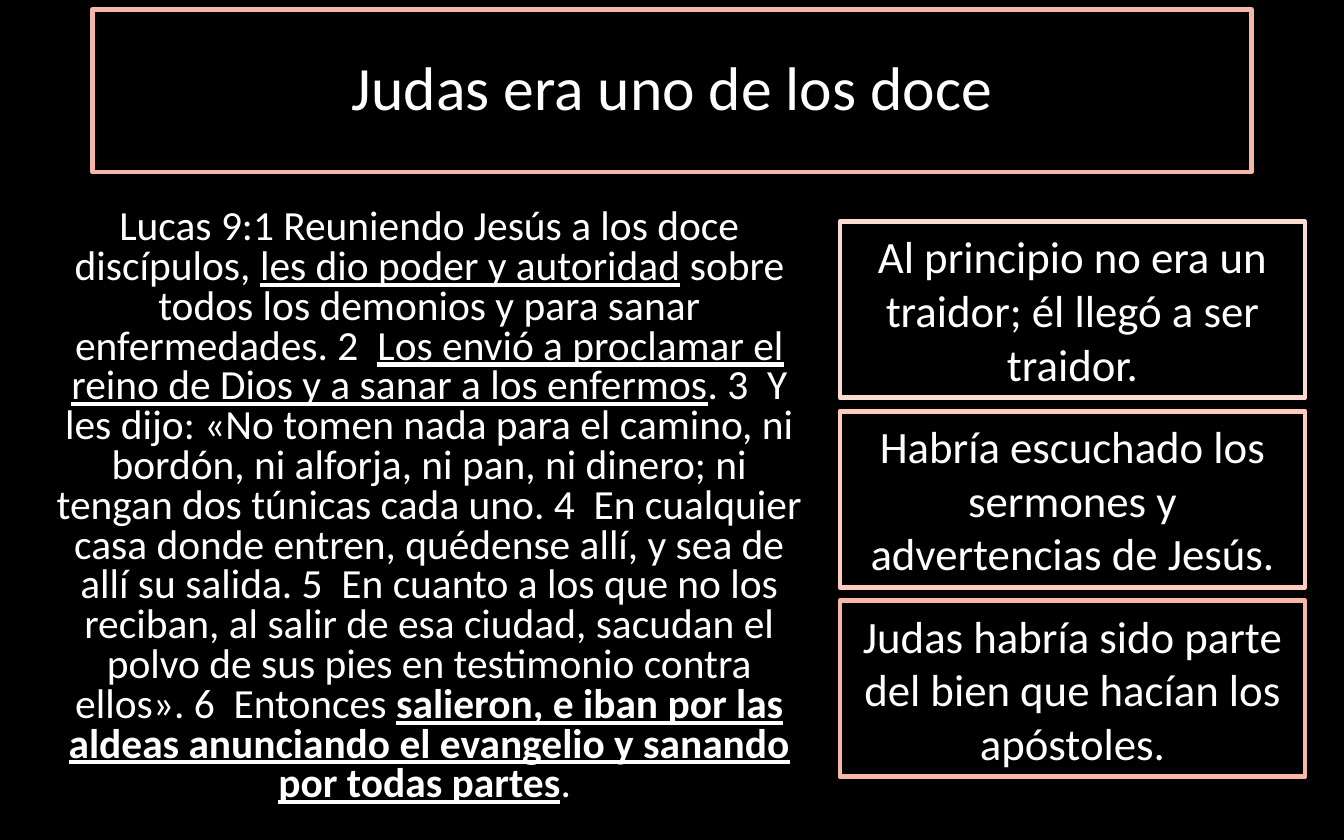
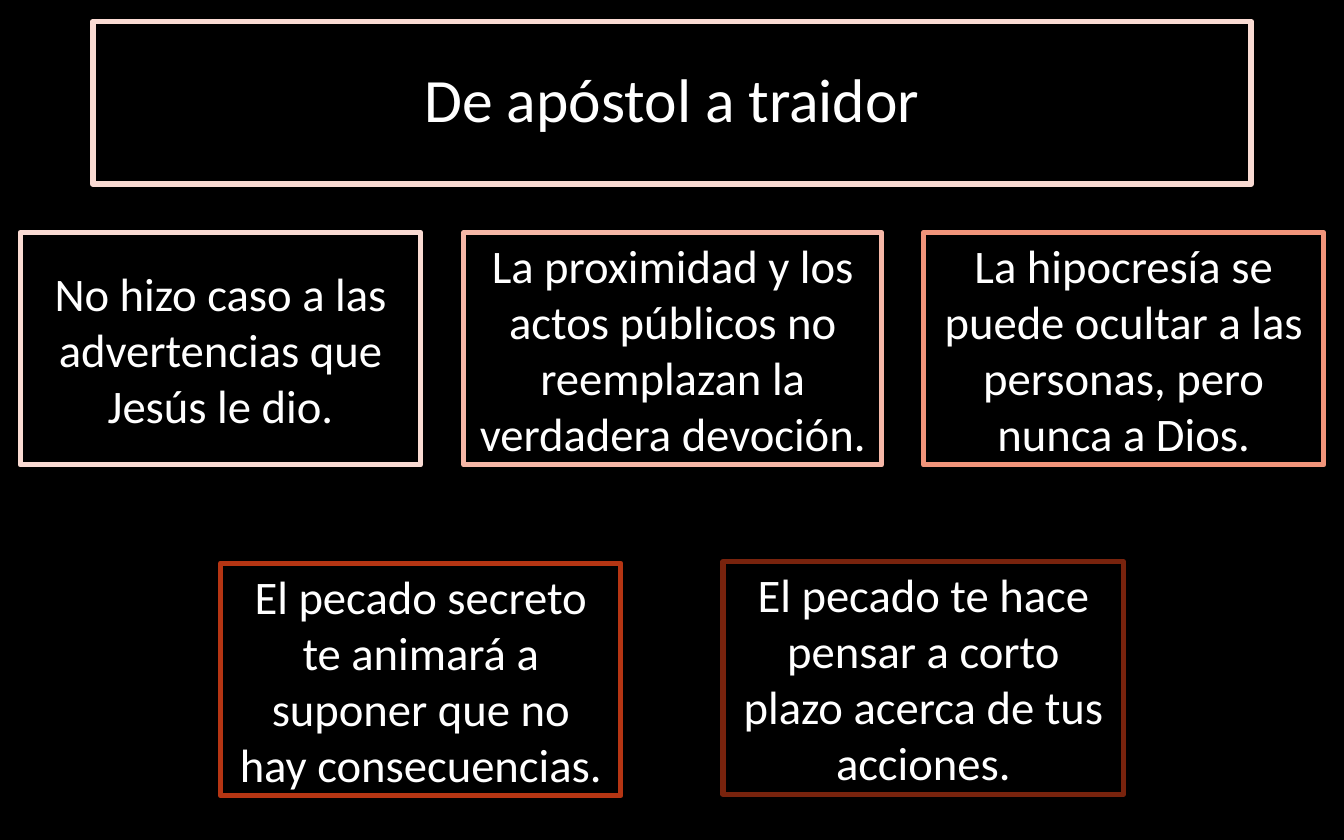
from pptx import Presentation
from pptx import util as u
from pptx.dml.color import RGBColor
from pptx.enum import shapes, text

HUES = {
    "back": "000000",
    "ink": "FFFFFF",
    "pale": "FADBD3",
    "blush": "FFCBBD",
    "rose": "F6B7A7",
    "coral": "F1947A",
    "rust": "B53513",
    "wine": "78230D",
}
FONT = "Calibri"
WIDE, HIGH = u.Inches(10), u.Inches(6.25)
COLS, ROWS = 100, 62.5


class Deck:
    def __init__(self):
        self.show = Presentation()
        self.show.slide_width, self.show.slide_height = WIDE, HIGH
        self.slide = None

    def hue(self, name):
        return RGBColor.from_string(HUES[name])

    def cells(self, x, y, w, h):
        col, row = WIDE / COLS, HIGH / ROWS
        return [u.Emu(round(n * size)) for n, size in zip((x, y, w, h), (col, row) * 2)]

    def page(self):
        self.slide = self.show.slides.add_slide(self.show.slide_layouts[6])
        fill = self.slide.background.fill
        fill.solid()
        fill.fore_color.rgb = self.hue("back")

    def label(self, shape, runs, size, lead=1.0):
        frame = shape.text_frame
        frame.word_wrap = True
        frame.vertical_anchor = text.MSO_ANCHOR.MIDDLE
        para = frame.paragraphs[0]
        para.alignment = text.PP_ALIGN.CENTER
        para.line_spacing = lead
        for words, style in runs:
            run = para.add_run()
            run.text = words
            font = run.font
            font.name, font.size = FONT, u.Pt(size)
            font.color.rgb = self.hue("ink")
            font.bold = "b" in style
            font.underline = "u" in style

    def box(self, words, place, edge, size, width, lead=1.0):
        shape = self.slide.shapes.add_shape(shapes.MSO_SHAPE.RECTANGLE, *self.cells(*place))
        shape.shadow.inherit = False
        shape.fill.background()
        shape.line.color.rgb = self.hue(edge)
        shape.line.width = u.Pt(width)
        self.label(shape, [(words, "")], size, lead)

    def title(self, words, top, edge, width):
        self.box(words, (6.9, top, 86.2, 12.1), edge, 33, width, 0.9)

    def verse(self, runs, place):
        shape = self.slide.shapes.add_textbox(*self.cells(*place))
        self.label(shape, runs, 22.2, 0.8)


def twelve(deck):
    deck.page()
    deck.title("Judas era uno de los doce", 0.7, "rose", 2.5)
    deck.verse([
        ("Lucas 9:1 Reuniendo Jesús a los doce discípulos, ", ""),
        ("les dio poder y autoridad", "u"),
        (" sobre todos los demonios y para sanar enfermedades. 2  ", ""),
        ("Los envió a proclamar el reino de Dios y a sanar a los enfermos", "u"),
        (". 3  Y les dijo: «No tomen nada para el camino, ni bordón, ni alforja, "
         "ni pan, ni dinero; ni tengan dos túnicas cada uno. 4  En cualquier casa "
         "donde entren, quédense allí, y sea de allí su salida. 5  En cuanto a los "
         "que no los reciban, al salir de esa ciudad, sacudan el polvo de sus pies "
         "en testimonio contra ellos». 6  Entonces ", ""),
        ("salieron, e iban por las aldeas anunciando el evangelio y sanando "
         "por todas partes", "bu"),
        (". ", ""),
    ], (2.9, 13.7, 58.1, 48.1))
    notes = [
        ("Al principio no era un traidor; él llegó a ser traidor.", "pale"),
        ("Habría escuchado los sermones y advertencias de Jesús.", "blush"),
        ("Judas habría sido parte del bien que hacían los apóstoles.", "rose"),
    ]
    for i, (words, edge) in enumerate(notes):
        deck.box(words, (62.5, 16.5 + 14.1 * i, 34.6, 13.1), edge, 24, 2.5)


def traitor(deck):
    deck.page()
    deck.title("De apóstol a traidor", 1.6, "pale", 3)
    cards = [
        ("No hizo caso a las advertencias que Jesús le dio.", 1.5, 17.3, 29.8, "pale"),
        ("La proximidad y los actos públicos no reemplazan la verdadera devoción.",
         34.5, 17.3, 31.1, "rose"),
        ("La hipocresía se puede ocultar a las personas, pero nunca a Dios.",
         68.7, 17.3, 29.8, "coral"),
        ("El pecado secreto te animará a suponer que no hay consecuencias.",
         16.4, 41.9, 29.8, "rust"),
        ("El pecado te hace pensar a corto plazo acerca de tus acciones.",
         53.8, 41.8, 29.8, "wine"),
    ]
    for words, x, y, w, edge in cards:
        deck.box(words, (x, y, w, 17.3), edge, 25, 2.75)


def main():
    deck = Deck()
    twelve(deck)
    traitor(deck)
    deck.show.save("out.pptx")


if __name__ == "__main__":
    main()
